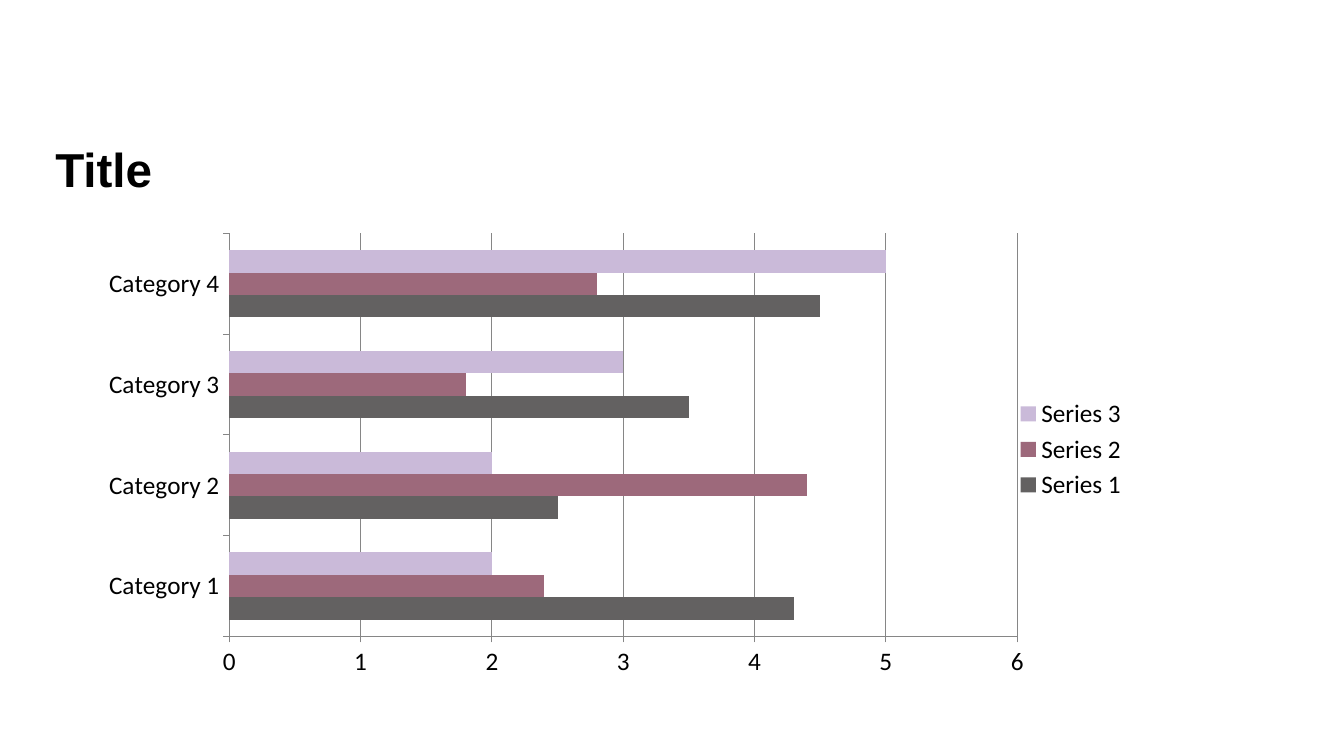
from dataclasses import dataclass

import lxml.etree
import pptx
import pptx.chart.data
import pptx.dml.color
import pptx.enum.chart
import pptx.enum.text
import pptx.oxml
import pptx.oxml.ns
import pptx.util

Cm = pptx.util.Cm
Pt = pptx.util.Pt

HUES = {
    "text": "000000",
    "line": "868686",
    "gray": "636161",
    "rose": "9D697B",
    "lilac": "CABAD9",
}


@dataclass
class Series:
    name: str
    hue: str
    vals: tuple[float, ...]


CATS = [f"Category {n}" for n in range(1, 5)]
ROWS = [
    Series("Series 1", "gray", (4.3, 2.5, 3.5, 4.5)),
    Series("Series 2", "rose", (2.4, 4.4, 1.8, 2.8)),
    Series("Series 3", "lilac", (2, 2, 3, 5)),
]
PLOT = {"x": 0.17, "y": 0.05, "w": 0.72, "h": 0.84}


def color(key: str) -> pptx.dml.color.RGBColor:
    return pptx.dml.color.RGBColor.from_string(HUES[key])


def add_title(slide) -> None:
    title = slide.shapes.title
    title.left, title.top = Cm(1.14), Cm(3.43)
    title.width, title.height = Cm(29.18), Cm(1.83)
    frame = title.text_frame
    frame.text = "Title"
    frame.word_wrap = True
    frame.auto_size = pptx.enum.text.MSO_AUTO_SIZE.NONE
    frame.vertical_anchor = pptx.enum.text.MSO_ANCHOR.MIDDLE
    para = frame.paragraphs[0]
    para.alignment = pptx.enum.text.PP_ALIGN.LEFT
    para.line_spacing = 0.9
    para.font.name = "Arial"
    para.font.size = Pt(34)
    para.font.bold = True
    para.font.color.rgb = color("text")


def set_plot(chart) -> None:
    """Fix the inner plot area as fractions of the chart."""
    area = chart.element.find(".//" + pptx.oxml.ns.qn("c:plotArea"))
    for old in area.findall(pptx.oxml.ns.qn("c:layout")):
        area.remove(old)
    modes = "".join(f'<c:{key}Mode val="edge"/>' for key in "xy")
    sizes = "".join(f'<c:{key} val="{val}"/>' for key, val in PLOT.items())
    area.insert(0, pptx.oxml.parse_xml(
        f'<c:layout {pptx.oxml.ns.nsdecls("c")}><c:manualLayout>'
        f'<c:layoutTarget val="inner"/>{modes}{sizes}'
        "</c:manualLayout></c:layout>"))


def style_axis(axis, grid: bool) -> None:
    axis.has_major_gridlines = grid
    axis.major_tick_mark = pptx.enum.chart.XL_TICK_MARK.OUTSIDE
    axis.minor_tick_mark = pptx.enum.chart.XL_TICK_MARK.NONE
    lines = [axis.format.line]
    if grid:
        lines.append(axis.major_gridlines.format.line)
    for line in lines:
        line.color.rgb = color("line")
        line.width = Pt(0.75)


def add_bars(slide) -> None:
    data = pptx.chart.data.CategoryChartData()
    data.categories = CATS
    for row in ROWS:
        data.add_series(row.name, row.vals)
    chart = slide.shapes.add_chart(
        pptx.enum.chart.XL_CHART_TYPE.BAR_CLUSTERED,
        Cm(1.09), Cm(5.28), Cm(27.58), Cm(12.09), data).chart
    chart.has_title = False
    chart.font.name = "Calibri"
    chart.font.size = Pt(18)
    chart.font.color.rgb = color("text")
    chart.has_legend = True
    chart.legend.position = pptx.enum.chart.XL_LEGEND_POSITION.RIGHT
    chart.legend.include_in_layout = False
    style_axis(chart.category_axis, False)
    style_axis(chart.value_axis, True)
    chart.value_axis.minimum_scale = 0
    chart.value_axis.maximum_scale = 6
    chart.value_axis.major_unit = 1
    plot = chart.plots[0]
    plot.gap_width = 150
    plot.vary_by_categories = False
    for bars, row in zip(plot.series, ROWS):
        bars.format.fill.solid()
        bars.format.fill.fore_color.rgb = color(row.hue)
    set_plot(chart)


def main() -> None:
    deck = pptx.Presentation()
    deck.slide_width, deck.slide_height = Cm(33.87), Cm(19.05)
    slide = deck.slides.add_slide(deck.slide_layouts[5])
    add_title(slide)
    add_bars(slide)
    deck.save("out.pptx")


if __name__ == "__main__":
    main()
